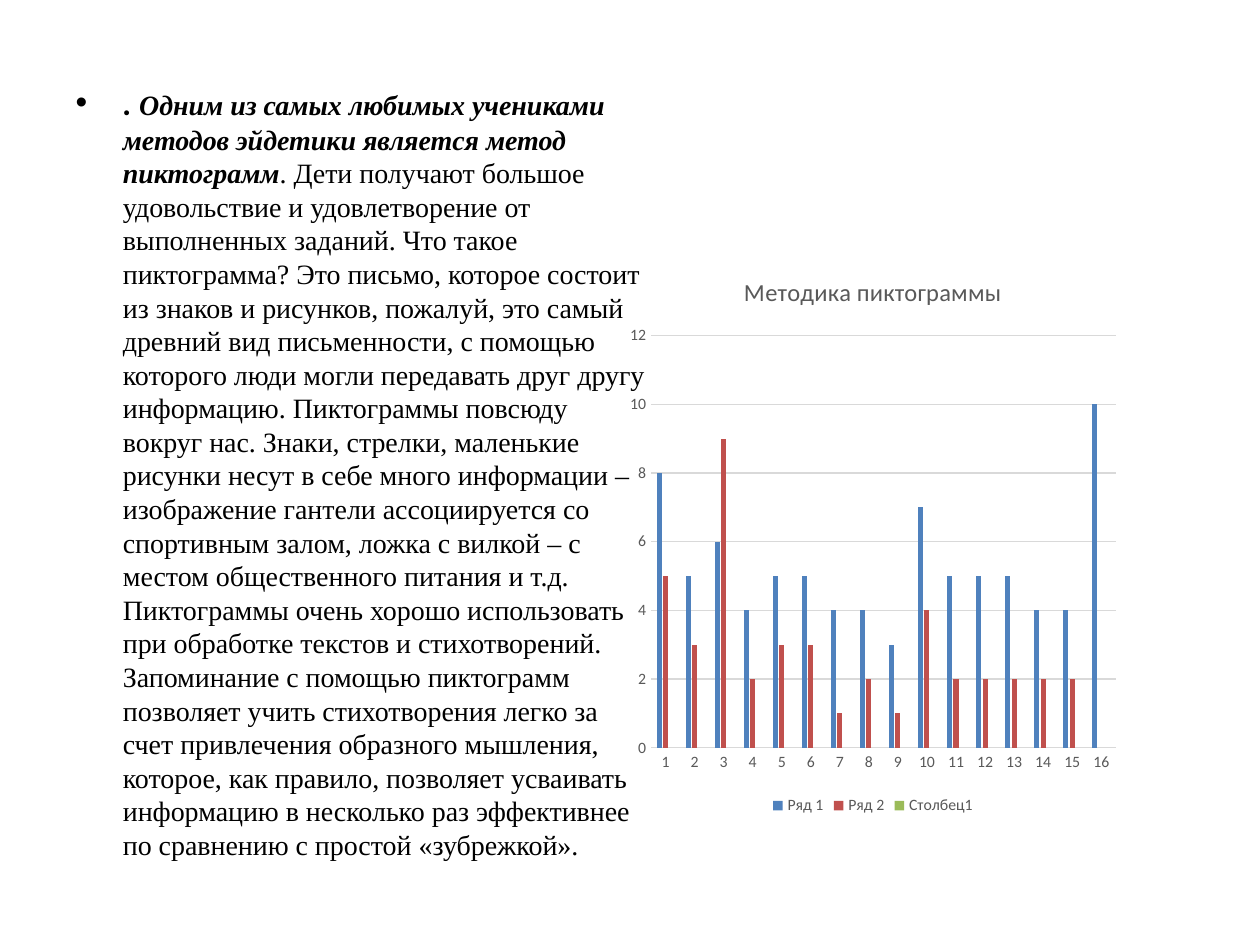
from pptx import Presentation
from pptx.chart.data import CategoryChartData
from pptx.dml.color import RGBColor as RGB
from pptx.enum.chart import XL_CHART_TYPE as Kind, XL_LEGEND_POSITION as Place
from pptx.enum.chart import XL_TICK_MARK as Tick
from pptx.enum.text import MSO_AUTO_SIZE as Fit
from pptx.util import Pt

PX = 914400 / 126
HEX = {"text": "000000", "label": "595959", "grid": "D9D9D9",
       "blue": "4F81BD", "red": "C0504D", "green": "9BBB59"}


def box(*px):
    return [round(n * PX) for n in px]


def style(font, size, color, face="Calibri"):
    font.size = Pt(size)
    font.name = face
    font.color.rgb = RGB.from_string(HEX[color])


prs = Presentation()
prs.slide_width, prs.slide_height = box(1260, 945)
slide = prs.slides.add_slide(prs.slide_layouts[1])
title = slide.shapes.title
title.element.getparent().remove(title.element)

# Body text: bold italic lead, then plain
body = slide.placeholders[1]
body.left, body.top, body.width, body.height = box(63, 76, 597, 769)
frame = body.text_frame
frame.auto_size = Fit.NONE
para = frame.paragraphs[0]
runs = [
    (". ", 19, "Calibri", True),
    ("Одним из самых любимых учениками методов эйдетики является метод "
     "пиктограмм", 16, "Times New Roman", True),
    (". Дети получают большое удовольствие и удовлетворение от выполненных "
     "заданий. Что такое пиктограмма? Это письмо, которое состоит из знаков и "
     "рисунков, пожалуй, это самый древний вид письменности, с помощью "
     "которого люди могли передавать друг другу информацию. Пиктограммы "
     "повсюду вокруг нас. Знаки, стрелки, маленькие рисунки несут в себе "
     "много информации – изображение гантели ассоциируется со спортивным "
     "залом, ложка с вилкой – с местом общественного питания и т.д. "
     "Пиктограммы очень хорошо использовать при обработке текстов и "
     "стихотворений. Запоминание с помощью пиктограмм позволяет учить "
     "стихотворения легко за счет привлечения образного мышления, которое, "
     "как правило, позволяет усваивать информацию в несколько раз "
     "эффективнее по сравнению с простой «зубрежкой».",
     16, "Times New Roman", False),
]
for text, size, face, lead in runs:
    run = para.add_run()
    run.text = text
    style(run.font, size, "text", face)
    run.font.bold = run.font.italic = lead

# Chart data
rows = [
    ("Ряд 1", "blue", [8, 5, 6, 4, 5, 5, 4, 4, 3, 7, 5, 5, 5, 4, 4, 10]),
    ("Ряд 2", "red", [5, 3, 9, 2, 3, 3, 1, 2, 1, 4, 2, 2, 2, 2, 2, None]),
    ("Столбец1", "green", [None] * 16),
]
data = CategoryChartData()
data.categories = [str(n) for n in range(1, 17)]
for name, _, vals in rows:
    data.add_series(name, vals)
chart = slide.shapes.add_chart(
    Kind.COLUMN_CLUSTERED, *box(620, 252, 506, 568), data).chart
style(chart.font, 10, "text")

# Chart title and legend
chart.has_title = True
head = chart.chart_title.text_frame
head.text = "Методика пиктограммы"
style(head.paragraphs[0].font, 14, "label")
head.paragraphs[0].font.bold = False
chart.chart_title.include_in_layout = False
chart.has_legend = True
chart.legend.position = Place.BOTTOM
chart.legend.include_in_layout = False
style(chart.legend.font, 9, "label")

# Columns
plot = chart.plots[0]
plot.vary_by_categories = False
plot.gap_width, plot.overlap = 219, -27
for bars, (_, color, _) in zip(plot.series, rows):
    bars.format.fill.solid()
    bars.format.fill.fore_color.rgb = RGB.from_string(HEX[color])
    bars.invert_if_negative = False

# Axes
cat, val = chart.category_axis, chart.value_axis
for axis in (cat, val):
    axis.major_tick_mark = axis.minor_tick_mark = Tick.NONE
    style(axis.tick_labels.font, 9, "label")
val.minimum_scale, val.maximum_scale, val.major_unit = 0, 12, 2
val.has_major_gridlines = True
val.format.line.fill.background()
for line in (cat.format.line, val.major_gridlines.format.line):
    line.color.rgb = RGB.from_string(HEX["grid"])
    line.width = Pt(0.75)

prs.save("out.pptx")
